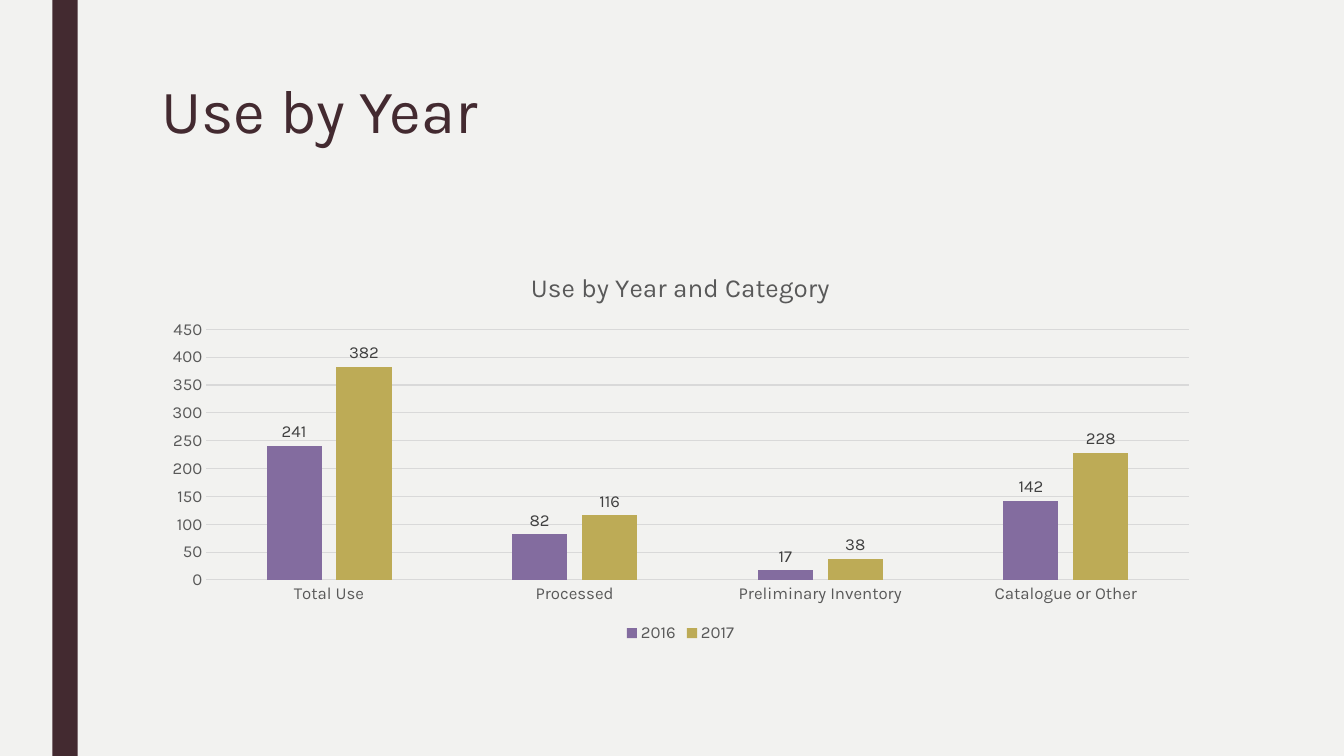
"""Build the "Use by Year" slide with a clustered column chart."""
from pptx import Presentation
from pptx.chart.data import CategoryChartData
from pptx.dml.color import RGBColor
from pptx.enum.chart import XL_CHART_TYPE, XL_LABEL_POSITION, XL_LEGEND_POSITION, XL_TICK_MARK
from pptx.enum.shapes import MSO_SHAPE
from pptx.enum.text import MSO_ANCHOR, MSO_AUTO_SIZE, PP_ALIGN
from pptx.util import Inches, Pt

COLORS = {
    "background": "F2F2F0",
    "maroon": "432A30",
    "gray": "595959",
    "label": "404040",
    "grid": "D9D9D9",
    "2016": "836C9F",
    "2017": "BDAB56",
}
USE_BY_YEAR = {"2016": (241, 82, 17, 142), "2017": (382, 116, 38, 228)}


def set_font(font, size, color):
    values = {"name": "Karla", "size": Pt(size), "bold": False}
    for name, value in values.items():
        setattr(font, name, value)
    font.color.rgb = RGBColor.from_string(COLORS[color])


def set_fill(fill, color):
    fill.solid()
    fill.fore_color.rgb = RGBColor.from_string(COLORS[color])


deck = Presentation()
deck.slide_width, deck.slide_height = Inches(13.33), Inches(7.5)
page = deck.slides.add_slide(deck.slide_layouts[5])
set_fill(page.background.fill, "background")

side_bar = page.shapes.add_shape(
    MSO_SHAPE.RECTANGLE, Inches(0.52), Inches(0), Inches(0.25), Inches(7.5))
side_bar.shadow.inherit = False
set_fill(side_bar.fill, "maroon")
side_bar.line.fill.background()

title = page.shapes.title
title_place = {"left": 1.5, "top": 0.75, "width": 10.5, "height": 1.62}
for name, value in title_place.items():
    setattr(title, name, Inches(value))
frame_format = {
    "text": "Use by Year",
    "word_wrap": True,
    "auto_size": MSO_AUTO_SIZE.NONE,
    "vertical_anchor": MSO_ANCHOR.TOP,
}
for name, value in frame_format.items():
    setattr(title.text_frame, name, value)
para = title.text_frame.paragraphs[0]
para.alignment = PP_ALIGN.LEFT
para.line_spacing = 0.89
set_font(para.runs[0].font, 44, "maroon")

chart_data = CategoryChartData()
chart_data.categories = [
    "Total Use", "Processed", "Preliminary Inventory", "Catalogue or Other"]
for year, counts in USE_BY_YEAR.items():
    chart_data.add_series(year, counts)
chart = page.shapes.add_chart(
    XL_CHART_TYPE.COLUMN_CLUSTERED,
    Inches(1.5), Inches(2.5), Inches(10.5), Inches(3.92), chart_data).chart
set_font(chart.font, 12, "gray")

chart.has_title = True
chart.chart_title.include_in_layout = False
chart.chart_title.text_frame.text = "Use by Year and Category"
set_font(chart.chart_title.text_frame.paragraphs[0].runs[0].font, 18.6, "gray")

chart.has_legend = True
chart.legend.position = XL_LEGEND_POSITION.BOTTOM
chart.legend.include_in_layout = False
set_font(chart.legend.font, 12, "gray")

for axis in (chart.category_axis, chart.value_axis):
    axis.major_tick_mark = axis.minor_tick_mark = XL_TICK_MARK.NONE
    set_font(axis.tick_labels.font, 12, "gray")
chart.value_axis.has_major_gridlines = True
chart.value_axis.format.line.fill.background()
for line in (chart.category_axis.format.line, chart.value_axis.major_gridlines.format.line):
    line.width = Pt(0.75)
    set_fill(line.fill, "grid")

plot = chart.plots[0]
plot_format = {"gap_width": 219, "overlap": -27, "vary_by_categories": False}
for name, value in plot_format.items():
    setattr(plot, name, value)
for series in plot.series:
    set_fill(series.format.fill, series.name)
    series.data_labels.show_value = True
    series.data_labels.position = XL_LABEL_POSITION.OUTSIDE_END
    set_font(series.data_labels.font, 12, "label")

deck.save("out.pptx")
